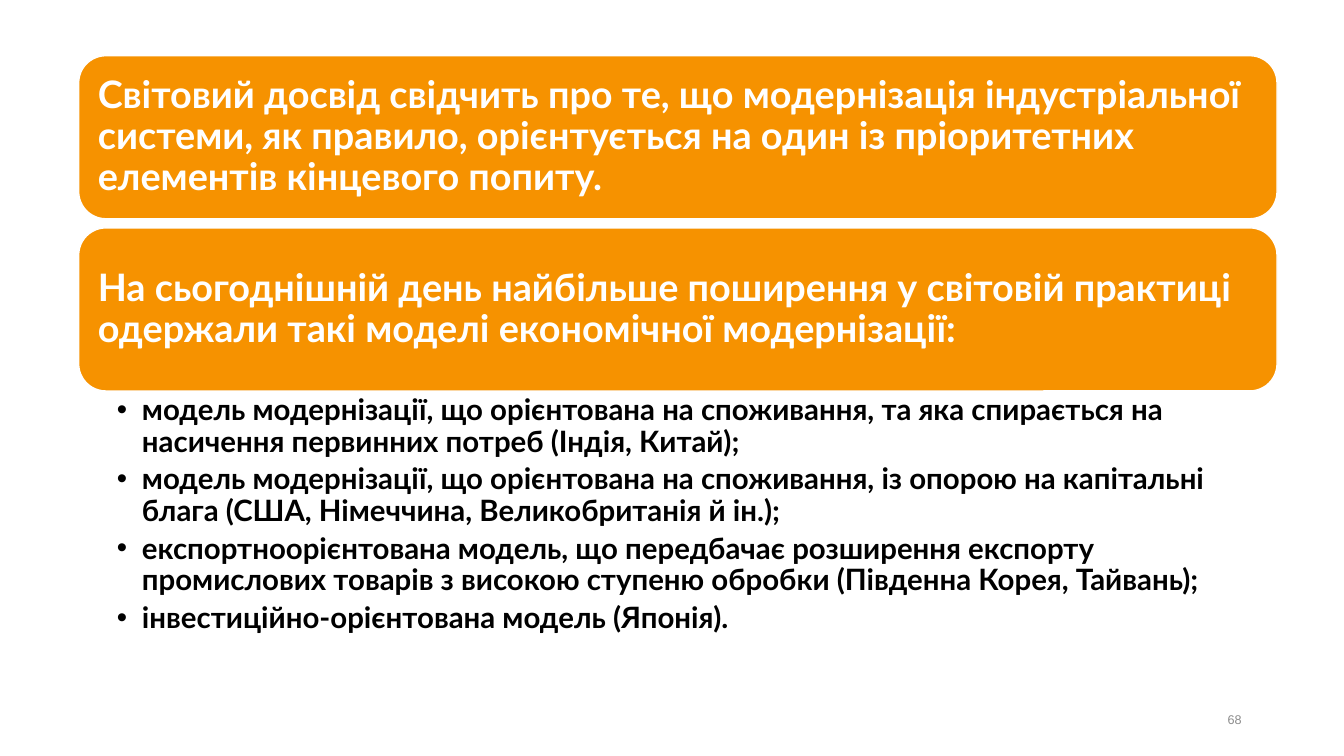
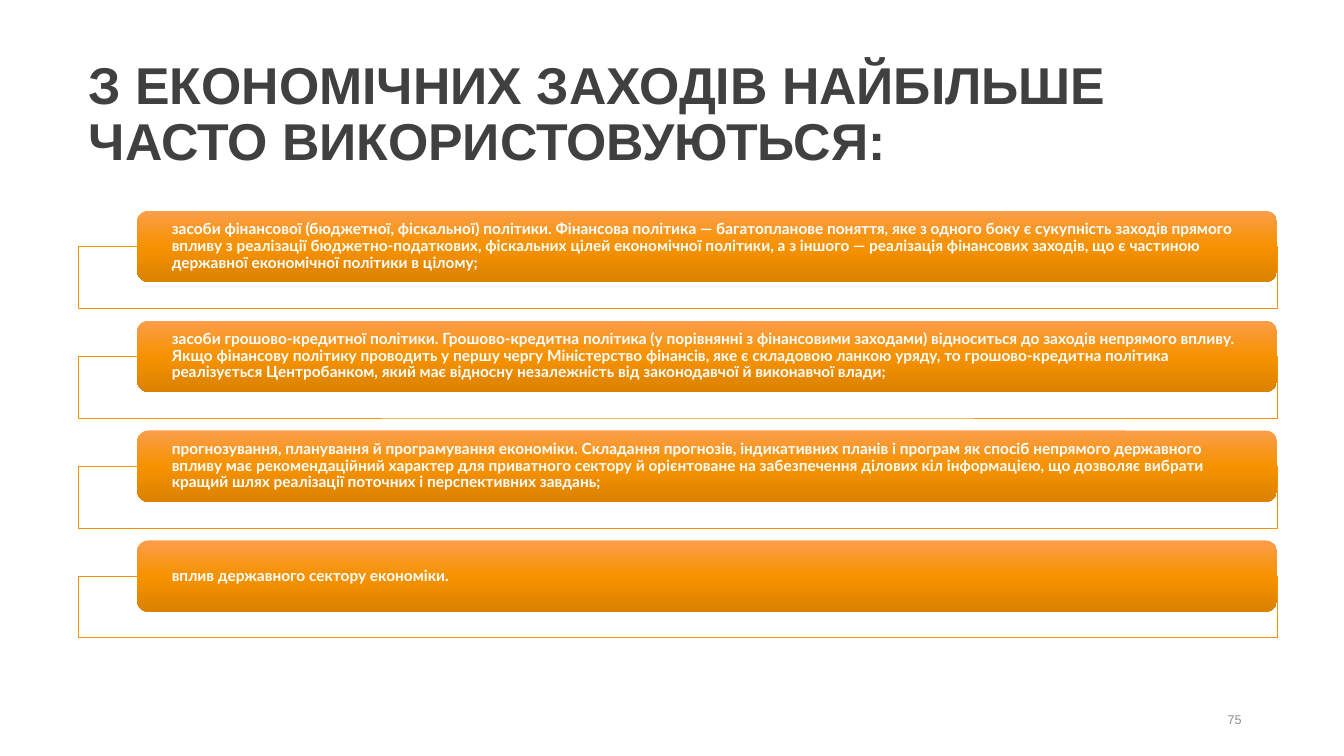
from copy import deepcopy

from lxml.etree import SubElement
from pptx import Presentation
from pptx.dml.color import RGBColor
from pptx.enum.shapes import MSO_SHAPE as Shape
from pptx.enum.text import MSO_ANCHOR as Anchor, MSO_AUTO_SIZE as AutoSize, PP_ALIGN as Align
from pptx.oxml.ns import qn
from pptx.util import Pt

COLORS = {name: RGBColor.from_string(value) for name, value in {
    "orange": "F69200", "light": "FB9E4B", "dark": "DB8200",
    "white": "FFFFFF", "black": "000000", "title": "404040", "number": "8C8C8C",
}.items()}
LEFT, WIDTH = 56.2, 856


def format_text(paragraph, size, color, font="Lato", bold=True):
    paragraph.line_spacing = 0.9
    paragraph.font.name = font
    paragraph.font.size = Pt(size)
    paragraph.font.bold = bold
    paragraph.font.color.rgb = COLORS[color]


def add_rounded_bar(slide, text, left, top, width, height, size, inset_x, inset_y):
    bar = slide.shapes.add_shape(Shape.ROUNDED_RECTANGLE, Pt(left), Pt(top), Pt(width), Pt(height))
    bar.shadow.inherit = False
    frame = bar.text_frame
    frame.word_wrap = True
    frame.vertical_anchor = Anchor.MIDDLE
    frame.margin_left = frame.margin_right = Pt(inset_x)
    frame.margin_top = frame.margin_bottom = Pt(inset_y)
    frame.text = text
    frame.paragraphs[0].alignment = Align.LEFT
    format_text(frame.paragraphs[0], size, "white")
    return bar


prs = Presentation()
prs.slide_width, prs.slide_height = Pt(960), Pt(540)
models_slide = prs.slides.add_slide(prs.slide_layouts[1])
measures_slide = prs.slides.add_slide(prs.slide_layouts[5])

# Slide numbers
for slide, number in ((models_slide, "68"), (measures_slide, "75")):
    number_box = slide.shapes.add_textbox(Pt(678), Pt(500.5), Pt(216), Pt(28.8))
    number_box.text_frame.word_wrap = True
    number_box.text_frame.vertical_anchor = Anchor.MIDDLE
    number_box.text_frame.text = number
    number_line = number_box.text_frame.paragraphs[0]
    number_line.alignment = Align.RIGHT
    format_text(number_line, 9, "number", "Arial", False)

# Modernisation models: two banners
unused_title = models_slide.shapes.title.element
unused_title.getparent().remove(unused_title)
statements = [
    "Світовий досвід свідчить про те, що модернізація індустріальної системи, як правило, "
    "орієнтується на один із пріоритетних елементів кінцевого попиту.",
    "На сьогоднішній день найбільше поширення у світовій практиці одержали такі моделі "
    "економічної модернізації:",
]
for row, statement in enumerate(statements):
    banner = add_rounded_bar(models_slide, statement, LEFT, 39.8 + row * 123, WIDTH, 116.5, 27, 8, 8)
    banner.fill.solid()
    banner.fill.fore_color.rgb = COLORS["orange"]
    banner.line.color.rgb = COLORS["white"]
    banner.line.width = Pt(1)

# Modernisation models: bulleted list
models = [
    "модель модернізації, що орієнтована на споживання, та яка спирається на насичення "
    "первинних потреб (Індія, Китай);",
    "модель модернізації, що орієнтована на споживання, із опорою на капітальні блага "
    "(США, Німеччина, Великобританія й ін.);",
    "експортноорієнтована модель, що передбачає розширення експорту промислових товарів "
    "з високою ступеню обробки (Південна Корея, Тайвань);",
    "інвестиційно-орієнтована модель (Японія).",
]
model_list = models_slide.placeholders[1]
model_list.left, model_list.top = Pt(LEFT), Pt(279.4)
model_list.width, model_list.height = Pt(WIDTH), Pt(180.7)
list_frame = model_list.text_frame
list_frame.auto_size = AutoSize.NONE
list_frame.vertical_anchor = Anchor.TOP
list_frame.margin_left, list_frame.margin_right = Pt(27.2), Pt(15.1)
list_frame.margin_top = list_frame.margin_bottom = Pt(2.7)
list_frame.text = "\n".join(models)
for model in list_frame.paragraphs:
    model.level = 1
    properties = model._p.get_or_add_pPr()
    properties.set("marL", str(Pt(18)))
    properties.set("indent", str(Pt(-18)))
    SubElement(properties, qn("a:buChar")).set("char", "•")
    model.space_before, model.space_after = Pt(0), Pt(4.2)
    format_text(model, 21, "black")

# Economic measures: title
title = measures_slide.shapes.title
title.left, title.top, title.width, title.height = Pt(LEFT), Pt(37.4), Pt(WIDTH), Pt(90)
title.text_frame.auto_size = AutoSize.NONE
title.text_frame.vertical_anchor = Anchor.MIDDLE
title.text_frame.text = "З ЕКОНОМІЧНИХ ЗАХОДІВ НАЙБІЛЬШЕ ЧАСТО ВИКОРИСТОВУЮТЬСЯ:"
title.text_frame.paragraphs[0].alignment = Align.LEFT
format_text(title.text_frame.paragraphs[0], 37, "title", "Arial")

# Economic measures: gradient bars over outlined frames
measures = [
    "засоби фінансової (бюджетної, фіскальної) політики. Фінансова політика — багатопланове "
    "поняття, яке з одного боку є сукупність заходів прямого впливу з реалізації "
    "бюджетно-податкових, фіскальних цілей економічної політики, а з іншого — реалізація "
    "фінансових заходів, що є частиною державної економічної політики в цілому;",
    "засоби грошово-кредитної політики. Грошово-кредитна політика (у порівнянні з фінансовими "
    "заходами) відноситься до заходів непрямого впливу. Якщо фінансову політику проводить у "
    "першу чергу Міністерство фінансів, яке є складовою ланкою уряду, то грошово-кредитна "
    "політика реалізується Центробанком, який має відносну незалежність від законодавчої й "
    "виконавчої влади;",
    "прогнозування, планування й програмування економіки. Складання прогнозів, індикативних "
    "планів і програм як спосіб непрямого державного впливу має рекомендаційний характер для "
    "приватного сектору й орієнтоване на забезпечення ділових кіл інформацією, що дозволяє "
    "вибрати кращий шлях реалізації поточних і перспективних завдань;",
    "вплив державного сектору економіки.",
]
for row, measure in enumerate(measures):
    top = 150.5 + row * 78.5
    outline = measures_slide.shapes.add_shape(
        Shape.RECTANGLE, Pt(LEFT), Pt(top + 25.7), Pt(WIDTH), Pt(43.9))
    outline.shadow.inherit = False
    outline.fill.solid()
    outline.fill.fore_color.rgb = COLORS["white"]
    white_fill = outline._element.spPr.find(".//" + qn("a:srgbClr"))
    SubElement(white_fill, qn("a:alpha")).set("val", "90000")
    outline.line.color.rgb = COLORS["orange"]
    outline.line.width = Pt(0.5)

    bar = add_rounded_bar(measures_slide, measure, 97.9, top, 814.3, 51, 11, 22.3, 0)
    bar.line.fill.background()
    bar.fill.gradient()
    bar.fill.gradient_angle = 270
    stop_list = bar._element.spPr.find(".//" + qn("a:gsLst"))
    stop_list.append(deepcopy(stop_list[0]))
    for stop, position, color in zip(bar.fill.gradient_stops, (0, 0.5, 1), ("light", "orange", "dark")):
        stop.position = position
        stop.color.rgb = COLORS[color]

prs.save("out.pptx")
